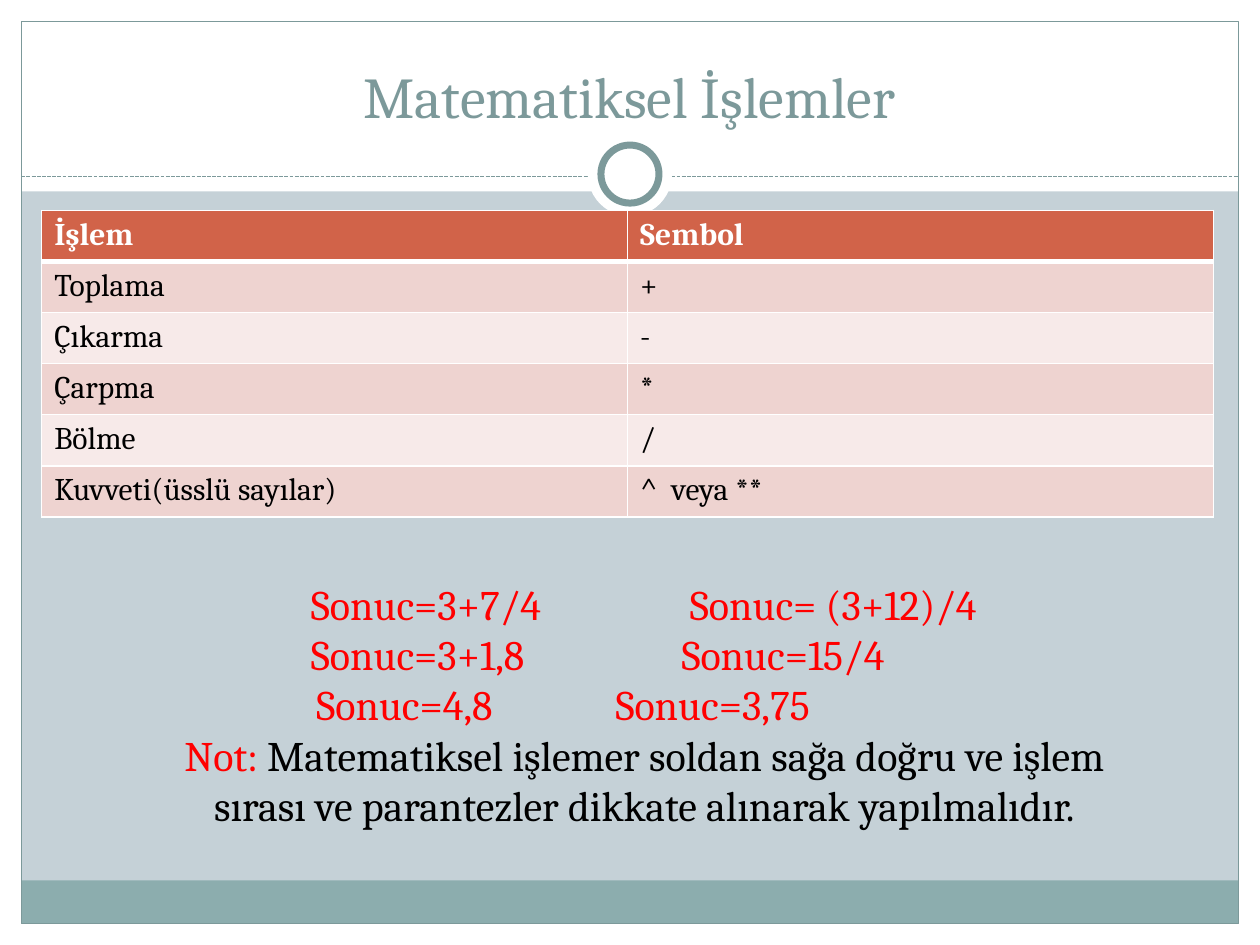
from dataclasses import dataclass

from lxml import etree
from pptx import Presentation
from pptx.dml.color import RGBColor
from pptx.enum.dml import MSO_LINE
from pptx.enum.shapes import MSO_CONNECTOR, MSO_SHAPE
from pptx.enum.text import MSO_ANCHOR, PP_ALIGN
from pptx.oxml.ns import qn
from pptx.util import Cm, Pt

RECTANGLE, ELLIPSE = MSO_SHAPE.RECTANGLE, MSO_SHAPE.OVAL
STRAIGHT = MSO_CONNECTOR.STRAIGHT
SHORT_DASH = MSO_LINE.SQUARE_DOT
TOP, BOTTOM = MSO_ANCHOR.TOP, MSO_ANCHOR.BOTTOM
LEFT, CENTER = PP_ALIGN.LEFT, PP_ALIGN.CENTER

PAGE_WIDTH, PAGE_HEIGHT = 25.4, 19.05
MARGIN = 0.43
INNER_WIDTH = PAGE_WIDTH - 2 * MARGIN
INNER_BOTTOM = PAGE_HEIGHT - MARGIN


@dataclass(frozen=True)
class Theme:
    font: str = "Cambria"
    background: str = "C5D1D7"
    white: str = "FFFFFF"
    black: str = "000000"
    red: str = "FF0000"
    accent: str = "7C999A"
    footer: str = "8CADAE"
    header: str = "D16349"
    bands: tuple = ("EED3D0", "F7EAE9")
    title_size: int = 33
    body_size: int = 24
    table_size: int = 18


THEME = Theme()

OPERATIONS = [
    ("İşlem", "Sembol"),
    ("Toplama", "+"),
    ("Çıkarma", "-"),
    ("Çarpma", "*"),
    ("Bölme", "/"),
    ("Kuvveti(üsslü sayılar)", "^  veya **"),
]

# Each worked step: left text, right text, and the tab stop of each in cm
STEPS = [
    ("Sonuc=3+7/4", "Sonuc= (3+12)/4", (3.33, 10.97)),
    ("Sonuc=3+1,8", "Sonuc=15/4", (3.33, 10.8)),
    ("Sonuc=4,8", "Sonuc=3,75", (3.44, 9.47)),
]
NOTE = ("Matematiksel işlemer soldan sağa doğru ve işlem sırası "
        "ve parantezler dikkate alınarak yapılmalıdır.")


def color(value):
    return RGBColor.from_string(value)


def add_span(para, text, *, size, fill, bold=False):
    span = para.add_run()
    span.text = text
    span.font.name = THEME.font
    span.font.size = Pt(size)
    span.font.bold = bold
    span.font.color.rgb = color(fill)


def set_tab_stops(para, positions):
    tab_list = etree.SubElement(para._p.get_or_add_pPr(), qn("a:tabLst"))
    for position in positions:
        etree.SubElement(tab_list, qn("a:tab"), pos=str(Cm(position)), algn="l")


def set_borders(cell, **widths):
    """Draw white cell borders; the keywords L, R, T, B give widths in points."""
    properties = cell._tc.get_or_add_tcPr()
    for index, (side, width) in enumerate(widths.items()):
        border = etree.Element(qn(f"a:ln{side}"), w=str(Pt(width)))
        fill = etree.SubElement(border, qn("a:solidFill"))
        etree.SubElement(fill, qn("a:srgbClr"), val=THEME.white)
        properties.insert(index, border)


class Painter:
    def __init__(self, page, theme):
        self.page, self.theme = page, theme
        page.background.fill.solid()
        page.background.fill.fore_color.rgb = color(theme.background)

    def shape(self, kind, left, top, width, height, *, fill=None, line=None, weight=0.75):
        shape = self.page.shapes.add_shape(kind, Cm(left), Cm(top), Cm(width), Cm(height))
        shape.shadow.inherit = False
        if fill:
            shape.fill.solid()
            shape.fill.fore_color.rgb = color(fill)
        else:
            shape.fill.background()
        if line:
            shape.line.color.rgb = color(line)
            shape.line.width = Pt(weight)
        else:
            shape.line.fill.background()

    def circle(self, center_x, center_y, diameter, **style):
        radius = diameter / 2
        self.shape(ELLIPSE, center_x - radius, center_y - radius, diameter, diameter, **style)

    def dashed_rule(self, left, right, y):
        rule = self.page.shapes.add_connector(STRAIGHT, Cm(left), Cm(y), Cm(right), Cm(y))
        rule.line.color.rgb = color(self.theme.accent)
        rule.line.width = Pt(0.75)
        rule.line.dash_style = SHORT_DASH
        etree.SubElement(rule._element.spPr, qn("a:effectLst"))

    def text_box(self, left, top, width, height, *, anchor=TOP):
        box = self.page.shapes.add_textbox(Cm(left), Cm(top), Cm(width), Cm(height))
        frame = box.text_frame
        frame.word_wrap = True
        frame.vertical_anchor = anchor
        return frame

    def table(self, rows, left, top, width, row_height):
        theme = self.theme
        table = self.page.shapes.add_table(
            len(rows), len(rows[0]), Cm(left), Cm(top), Cm(width), Cm(row_height * len(rows))
        ).table
        for row, texts in enumerate(rows):
            is_header = row == 0
            for column, text in enumerate(texts):
                cell = table.cell(row, column)
                cell.fill.solid()
                cell.fill.fore_color.rgb = color(
                    theme.header if is_header else theme.bands[(row - 1) % 2])
                set_borders(cell, L=1, R=1, T=3 if row == 1 else 1, B=3 if is_header else 1)
                add_span(cell.text_frame.paragraphs[0], text, size=theme.table_size,
                         fill=theme.white if is_header else theme.black, bold=is_header)


def draw_frame(painter):
    theme = painter.theme
    for area in [
        (0, INNER_BOTTOM, PAGE_WIDTH, MARGIN),
        (0, 0, PAGE_WIDTH, 3.86),
        (0, 0, MARGIN, PAGE_HEIGHT),
        (PAGE_WIDTH - MARGIN, 0, MARGIN, PAGE_HEIGHT),
    ]:
        painter.shape(RECTANGLE, *area, fill=theme.white)
    painter.shape(RECTANGLE, MARGIN, 17.75, INNER_WIDTH, 0.87, fill=theme.footer)
    painter.shape(RECTANGLE, MARGIN, MARGIN, INNER_WIDTH, INNER_BOTTOM - MARGIN,
                  line=theme.accent)
    painter.dashed_rule(MARGIN, PAGE_WIDTH - MARGIN, 3.56)
    painter.circle(PAGE_WIDTH / 2, 3.51, 1.7, fill=theme.white)
    painter.circle(PAGE_WIDTH / 2, 3.51, 1.17, fill=theme.white, line=theme.accent, weight=4)


def draw_title(painter):
    para = painter.text_box(0.84, 0.64, 23.7, 2.11, anchor=BOTTOM).paragraphs[0]
    para.alignment = CENTER
    add_span(para, "Matematiksel İşlemler", size=painter.theme.title_size,
             fill=painter.theme.accent)


def draw_examples(painter):
    theme = painter.theme
    frame = painter.text_box(2.69, 11.53, 20.6, 6.4)
    for index, (left_text, right_text, stops) in enumerate(STEPS):
        para = frame.add_paragraph() if index else frame.paragraphs[0]
        para.alignment = LEFT
        set_tab_stops(para, stops)
        add_span(para, f"\t{left_text}\t{right_text}", size=theme.body_size, fill=theme.red)
    para = frame.add_paragraph()
    para.alignment = CENTER
    add_span(para, "Not: ", size=theme.body_size, fill=theme.red)
    add_span(para, NOTE, size=theme.body_size, fill=theme.black)


def main():
    deck = Presentation()
    deck.slide_width, deck.slide_height = Cm(PAGE_WIDTH), Cm(PAGE_HEIGHT)
    painter = Painter(deck.slides.add_slide(deck.slide_layouts[6]), THEME)
    draw_frame(painter)
    draw_title(painter)
    painter.table(OPERATIONS, 0.84, 4.24, 23.62, 1.03)
    draw_examples(painter)
    deck.save("out.pptx")


if __name__ == "__main__":
    main()
